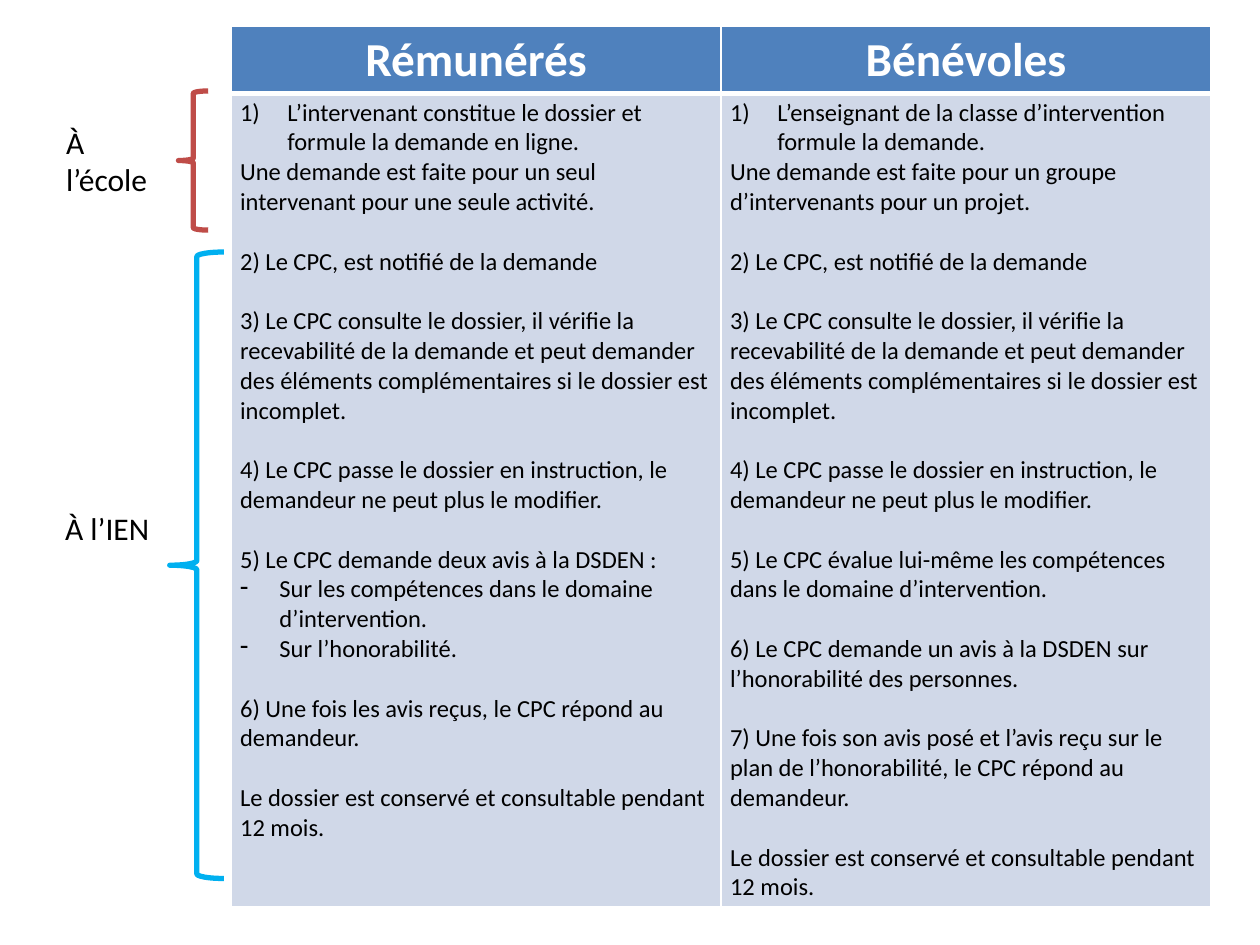
from dataclasses import dataclass

from lxml import etree
from pptx import Presentation
from pptx.dml.color import RGBColor
from pptx.enum.shapes import MSO_SHAPE
from pptx.enum.text import PP_ALIGN
from pptx.oxml.ns import qn
from pptx.util import Pt

LEFT_BRACE = MSO_SHAPE.LEFT_BRACE
LEFT, CENTER = PP_ALIGN.LEFT, PP_ALIGN.CENTER


@dataclass(frozen=True)
class Theme:
    font: str = "Calibri"
    header_size: float = 27
    body_size: float = 14
    label_size: float = 18
    gap: float = 17
    black: str = "000000"
    white: str = "FFFFFF"
    header_fill: str = "4F81BD"
    body_fill: str = "D0D8E8"
    school: str = "BF4C48"
    office: str = "00B0F0"


THEME = Theme()

# Paragraph kinds: a step opens a new block, plain text continues it
STEP, PLAIN, NUMBER, DASH = "step", "plain", "number", "dash"
INDENTS = {NUMBER: 27, DASH: 22.5}

COMMON_STEPS = [
    (STEP, "2) Le CPC, est notifié de la demande"),
    (STEP, "3) Le CPC consulte le dossier, il vérifie la recevabilité de la demande "
           "et peut demander des éléments complémentaires si le dossier est incomplet."),
    (STEP, "4) Le CPC passe le dossier en instruction, le demandeur ne peut plus "
           "le modifier."),
]
ARCHIVE = (STEP, "Le dossier est conservé et consultable pendant 12 mois.")

COLUMNS = {
    "Rémunérés": [
        (NUMBER, "L’intervenant constitue le dossier et formule la demande en ligne."),
        (PLAIN, "Une demande est faite pour un seul intervenant pour une seule activité."),
        *COMMON_STEPS,
        (STEP, "5) Le CPC demande deux avis à la DSDEN :"),
        (DASH, "Sur les compétences dans le domaine d’intervention."),
        (DASH, "Sur l’honorabilité."),
        (STEP, "6) Une fois les avis reçus, le CPC répond au demandeur."),
        ARCHIVE,
    ],
    "Bénévoles": [
        (NUMBER, "L’enseignant de la classe d’intervention formule la demande."),
        (PLAIN, "Une demande est faite pour un groupe d’intervenants pour un projet."),
        *COMMON_STEPS,
        (STEP, "5) Le CPC évalue lui-même les compétences dans le domaine d’intervention."),
        (STEP, "6) Le CPC demande un avis à la DSDEN sur l’honorabilité des personnes."),
        (STEP, "7) Une fois son avis posé et l’avis reçu sur le plan de l’honorabilité, "
               "le CPC répond au demandeur."),
        ARCHIVE,
    ],
}


def rgb(value):
    return RGBColor.from_string(value)


def write(p, text, *, size, color=THEME.black, bold=False, align=LEFT, before=0):
    p.alignment = align
    p.space_before = Pt(before)
    r = p.add_run()
    r.text = text
    r.font.name = THEME.font
    r.font.size = Pt(size)
    r.font.bold = bold
    r.font.color.rgb = rgb(color)


def add_bullet(p, kind):
    indent = Pt(INDENTS[kind])
    pPr = p._p.get_or_add_pPr()
    pPr.set("marL", str(indent))
    pPr.set("indent", str(-indent))
    if kind == NUMBER:
        etree.SubElement(pPr, qn("a:buAutoNum"), type="arabicParenR")
    else:
        etree.SubElement(pPr, qn("a:buFontTx"))
        etree.SubElement(pPr, qn("a:buChar"), char="-")


def style_cell(cell, fill, top=1, bottom=1):
    cell.margin_left = cell.margin_right = Pt(5.2)
    cell.margin_top = cell.margin_bottom = Pt(2.6)
    cell.fill.solid()
    cell.fill.fore_color.rgb = rgb(fill)
    tcPr = cell._tc.get_or_add_tcPr()
    widths = {"a:lnL": 1, "a:lnR": 1, "a:lnT": top, "a:lnB": bottom}
    for i, (tag, width) in enumerate(widths.items()):
        ln = etree.Element(qn(tag), w=str(Pt(width)))
        solid = etree.SubElement(ln, qn("a:solidFill"))
        etree.SubElement(solid, qn("a:srgbClr"), val=THEME.white)
        tcPr.insert(i, ln)


def add_procedure_table(s, x, y, w, h, header_h=38):
    table = s.shapes.add_table(2, len(COLUMNS), Pt(x), Pt(y), Pt(w), Pt(h)).table
    table.rows[0].height = Pt(header_h)
    table.rows[1].height = Pt(h - header_h)
    for col, (title, steps) in enumerate(COLUMNS.items()):
        table.columns[col].width = Pt(w / len(COLUMNS))
        head, body = table.cell(0, col), table.cell(1, col)
        style_cell(head, THEME.header_fill, bottom=3)
        style_cell(body, THEME.body_fill, top=3)
        write(head.text_frame.paragraphs[0], title, size=THEME.header_size,
              color=THEME.white, bold=True, align=CENTER)
        tf = body.text_frame
        for i, (kind, text) in enumerate(steps):
            p = tf.add_paragraph() if i else tf.paragraphs[0]
            write(p, text, size=THEME.body_size,
                  before=THEME.gap if kind == STEP else 0)
            if kind in INDENTS:
                add_bullet(p, kind)


def add_brace(s, x, y, w, h, color):
    sp = s.shapes.add_shape(LEFT_BRACE, Pt(x), Pt(y), Pt(w), Pt(h))
    sp.shadow.inherit = False
    sp.fill.background()
    sp.line.color.rgb = rgb(color)
    sp.line.width = Pt(3)


def add_place_label(s, x, y, w, h, text):
    tf = s.shapes.add_textbox(Pt(x), Pt(y), Pt(w), Pt(h)).text_frame
    tf.word_wrap = True
    write(tf.paragraphs[0], text, size=THEME.label_size)


def main():
    prs = Presentation()
    prs.slide_width, prs.slide_height = Pt(720), Pt(540)
    s = prs.slides.add_slide(prs.slide_layouts[6])

    # Procedure for each kind of helper
    add_procedure_table(s, 132, 15.2, 560, 503)

    # Where each stage takes place
    add_brace(s, 102, 52, 17, 79.5, THEME.school)
    add_brace(s, 97, 144, 31, 358, THEME.office)
    add_place_label(s, 30.7, 66.5, 62.6, 51, "À l’école")
    add_place_label(s, 30.2, 287.5, 62.6, 51, "À l’IEN")

    prs.save("out.pptx")


if __name__ == "__main__":
    main()
